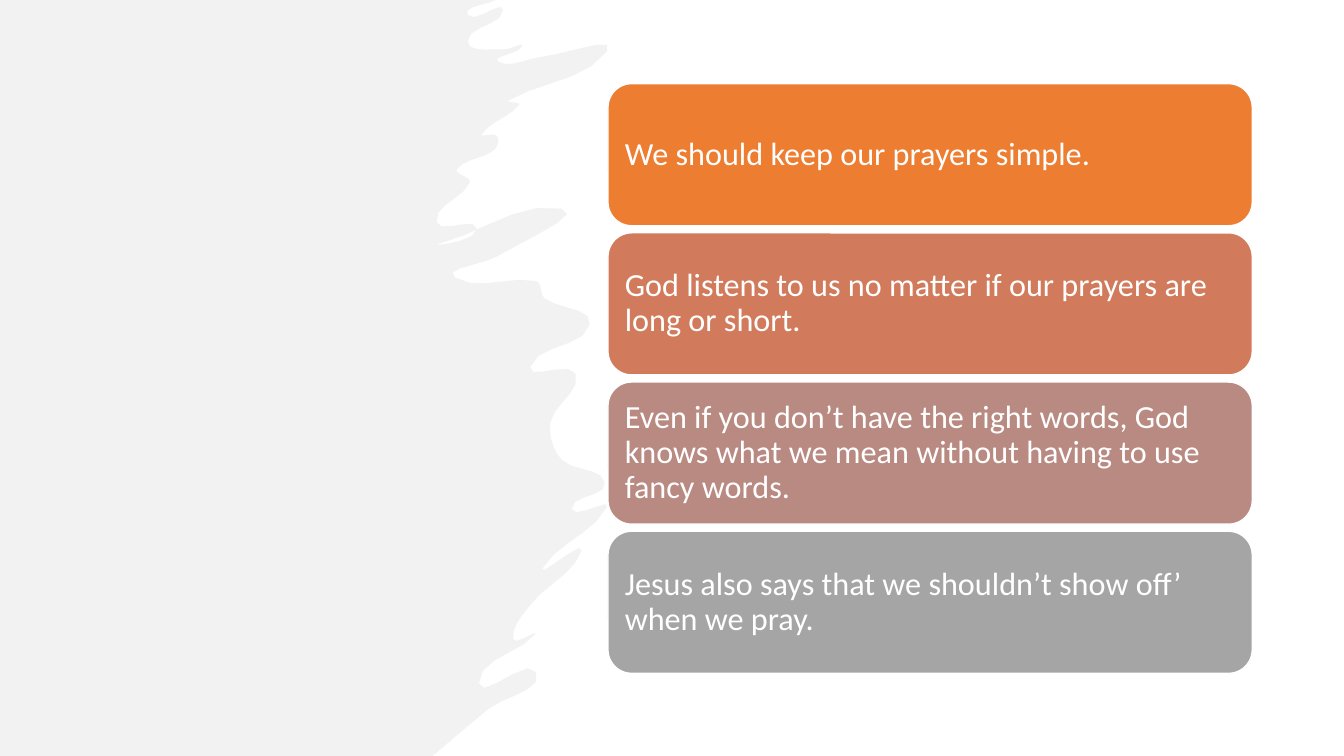
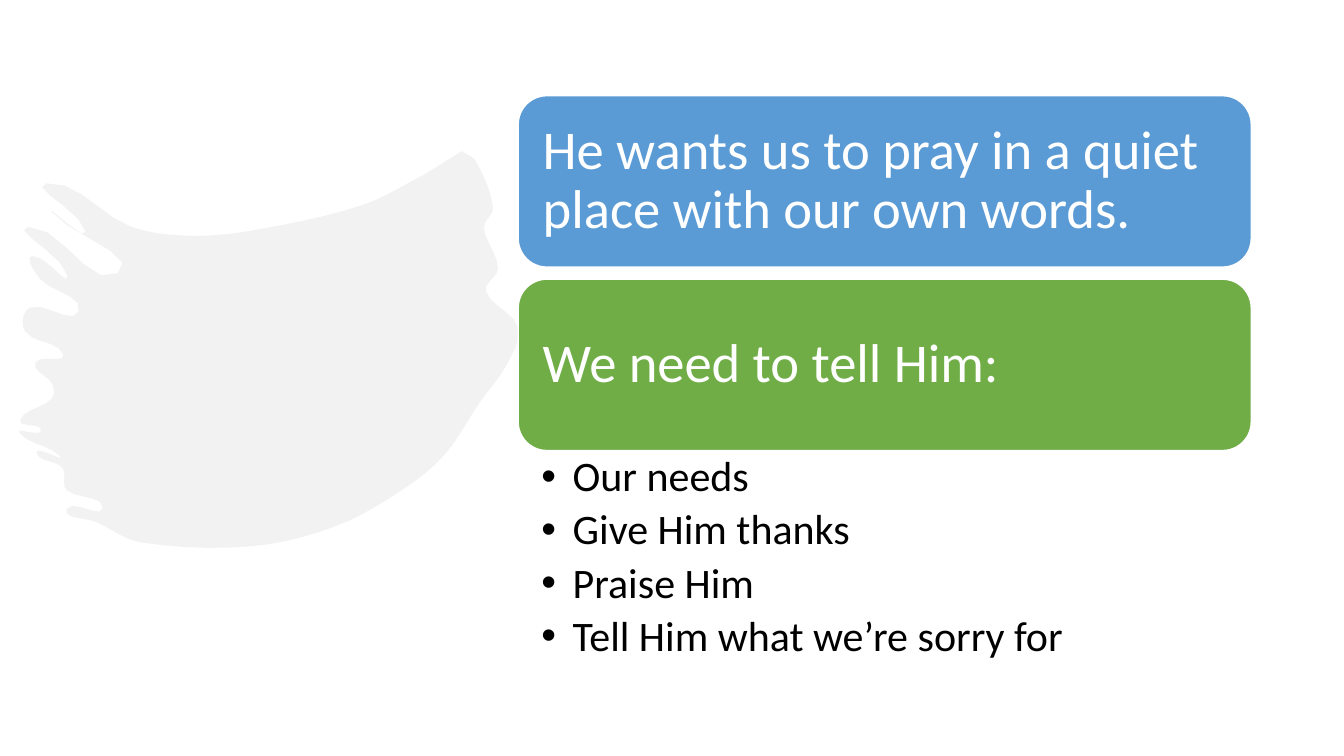
"""Build two prayer slides with brush strokes and stacked cards."""
from dataclasses import dataclass
from math import dist

from lxml.etree import SubElement
from pptx import Presentation
from pptx.dml.color import RGBColor
from pptx.enum.shapes import MSO_SHAPE
from pptx.enum.text import MSO_ANCHOR, MSO_AUTO_SIZE, PP_ALIGN
from pptx.oxml.ns import qn
from pptx.slide import Slide
from pptx.util import Emu, Pt

PX = 9144
FONT = "Calibri"
WHITE = RGBColor(0xFF, 0xFF, 0xFF)
BLACK = RGBColor(0x00, 0x00, 0x00)
BRUSH = RGBColor(0xE7, 0xE6, 0xE6)
ORANGE = RGBColor(0xED, 0x7D, 0x31)
TERRACOTTA = RGBColor(0xD1, 0x7B, 0x5C)
ROSE = RGBColor(0xB9, 0x8A, 0x82)
GREY = RGBColor(0xA5, 0xA5, 0xA5)
BLUE = RGBColor(0x5B, 0x9B, 0xD5)
GREEN = RGBColor(0x70, 0xAD, 0x47)

Point = tuple[float, float]

PANEL_CORNERS = ((0, 750), (0, 0))
PANEL_EDGE = (
    (492, 0), (464, 15), (499, 10), (464, 41), (500, 49), (518, 46), (494, 61), (535, 57),
    (602, 51), (504, 100), (515, 104), (478, 133), (493, 135), (490, 149), (453, 168),
    (466, 181), (433, 220), (473, 227), (435, 242), (557, 207), (494, 254), (451, 275),
    (532, 279), (540, 296), (585, 322), (526, 364), (571, 371), (546, 419), (557, 456),
    (600, 479), (567, 505), (602, 503), (538, 564), (577, 546), (527, 599), (509, 634),
    (531, 629), (475, 678), (532, 667), (485, 703), (429, 750),
)
STROKE_EDGE = (
    (458, 150), (472, 160), (489, 206), (480, 226), (494, 266), (482, 289), (514, 325),
    (503, 361), (476, 399), (441, 451), (399, 486), (333, 522), (249, 542), (139, 538),
    (96, 518), (66, 505), (102, 504), (66, 486), (62, 464), (36, 449), (60, 453), (19, 429),
    (41, 427), (20, 417), (51, 396), (52, 381), (35, 360), (63, 352), (25, 329), (30, 305),
    (78, 309), (40, 277), (32, 254), (67, 274), (28, 225), (117, 271), (51, 210), (85, 230),
    (46, 182), (130, 225), (192, 234), (260, 227), (361, 203), (423, 172),
)
NEEDS = ("Our needs", "Give Him thanks", "Praise Him", "Tell Him what we’re sorry for")


@dataclass(frozen=True)
class Card:
    """Wording and fill of one rounded card."""

    text: str
    fill: RGBColor


@dataclass(frozen=True)
class Stack:
    """Geometry and text size of a column of cards, in px and points."""

    left: int
    top: int
    width: int
    height: int
    pitch: int
    inset: int
    size: int


PRAYER_STACK = Stack(603, 83, 639, 141, 148, 10, 23)
PRAYER_CARDS = (
    Card("We should keep our prayers simple.", ORANGE),
    Card("God listens to us no matter if our prayers are long or short.", TERRACOTTA),
    Card("Even if you don’t have the right words, God knows what we mean "
         "without having to use fancy words.", ROSE),
    Card("Jesus also says that we shouldn’t show off’ when we pray.", GREY),
)
QUIET_STACK = Stack(514, 95, 727, 170, 182, 16, 39)
QUIET_CARDS = (
    Card("He wants us to pray in a quiet place with our own words.", BLUE),
    Card("We need to tell Him:", GREEN),
)


def px(length: float) -> Emu:
    """Turn px into EMU."""
    return Emu(round(length * PX))


def apply(target: object, formats: dict[str, object]) -> None:
    """Set every attribute named in the format values."""
    for name, value in formats.items():
        setattr(target, name, value)


def format_insets(left: int, top: int, right: int, bottom: int) -> dict[str, object]:
    """Return text frame format values for the given insets."""
    return {
        "margin_left": px(left), "margin_top": px(top),
        "margin_right": px(right), "margin_bottom": px(bottom),
        "word_wrap": True, "auto_size": MSO_AUTO_SIZE.NONE,
    }


def write(para: object, text: str, size: int, colour: RGBColor, after: float = 0) -> None:
    """Write one left-aligned span into a paragraph."""
    apply(para, {"alignment": PP_ALIGN.LEFT, "line_spacing": 0.9,
                 "space_before": Pt(0), "space_after": Pt(after)})
    span = para.add_run()
    span.text = text
    apply(span.font, {"name": FONT, "size": Pt(size)})
    span.font.color.rgb = colour


def smooth(edge: tuple[Point, ...], steps: int = 5) -> list[Point]:
    """Return points on a soft curve through the edge."""
    tangents = []
    for before, after in zip(edge[:1] + edge[:-1], edge[1:] + edge[-1:]):
        length = dist(before, after) or 1
        tangents.append(((after[0] - before[0]) / length, (after[1] - before[1]) / length))
    curve = [edge[0]]
    for index, (start, end) in enumerate(zip(edge, edge[1:])):
        reach = dist(start, end) / 3
        for step in range(1, steps + 1):
            t = step / steps
            curve.append(tuple(
                (1 - t) ** 3 * start[axis]
                + 3 * t * (1 - t) ** 2 * (start[axis] + reach * tangents[index][axis])
                + 3 * t * t * (1 - t) * (end[axis] - reach * tangents[index + 1][axis])
                + t ** 3 * end[axis]
                for axis in (0, 1)))
    return curve


def draw_brush(page: Slide, edge: tuple[Point, ...], corners: tuple[Point, ...] = ()) -> None:
    """Draw a half-transparent brush area."""
    points = [(px(x), px(y)) for x, y in smooth(edge) + list(corners)]
    builder = page.shapes.build_freeform(*points[0], scale=1.0)
    builder.add_line_segments(points[1:], close=True)
    brush = builder.convert_to_shape()
    brush.shadow.inherit = False
    brush.line.fill.background()
    brush.fill.solid()
    brush.fill.fore_color.rgb = BRUSH
    colour = brush._element.spPr.find(".//" + qn("a:srgbClr"))
    SubElement(colour, qn("a:alpha"), val="50000")


def draw_cards(page: Slide, stack: Stack, cards: tuple[Card, ...]) -> None:
    """Draw a column of cards at equal steps."""
    for index, card in enumerate(cards):
        top = stack.top + index * stack.pitch
        box = page.shapes.add_shape(
            MSO_SHAPE.ROUNDED_RECTANGLE,
            *map(px, (stack.left, top, stack.width, stack.height)))
        box.shadow.inherit = False
        box.fill.solid()
        box.fill.fore_color.rgb = card.fill
        box.line.color.rgb = WHITE
        box.line.width = Pt(1)
        apply(box.text_frame, format_insets(*[stack.inset] * 4))
        box.text_frame.vertical_anchor = MSO_ANCHOR.MIDDLE
        write(box.text_frame.paragraphs[0], card.text, stack.size, WHITE)


def fill_list(page: Slide, items: tuple[str, ...]) -> None:
    """Move the body placeholder and fill it with bullets."""
    body = page.placeholders[1]
    apply(body, {"left": px(514), "top": px(447), "width": px(727), "height": px(225)})
    frame = body.text_frame
    apply(frame, format_insets(23, 5, 30, 5))
    frame.vertical_anchor = MSO_ANCHOR.TOP
    for index, item in enumerate(items):
        para = frame.add_paragraph() if index else frame.paragraphs[0]
        write(para, item, 30, BLACK, after=5.5)
        properties = para._p.get_or_add_pPr()
        properties.set("marL", str(px(31)))
        properties.set("indent", str(-px(31)))
        SubElement(properties, qn("a:buFont"), typeface="Arial")
        SubElement(properties, qn("a:buChar"), char="•")


def remove_empty_placeholders(page: Slide) -> None:
    """Remove placeholders that hold no text."""
    for holder in list(page.placeholders):
        if not holder.text_frame.text:
            holder._element.getparent().remove(holder._element)


def main() -> None:
    """Build and save the deck."""
    deck = Presentation()
    apply(deck, {"slide_width": px(1333), "slide_height": px(750)})
    layout = deck.slide_layouts[1]

    page = deck.slides.add_slide(layout)
    draw_brush(page, PANEL_EDGE, PANEL_CORNERS)
    draw_cards(page, PRAYER_STACK, PRAYER_CARDS)
    remove_empty_placeholders(page)

    page = deck.slides.add_slide(layout)
    draw_brush(page, STROKE_EDGE)
    draw_cards(page, QUIET_STACK, QUIET_CARDS)
    fill_list(page, NEEDS)
    remove_empty_placeholders(page)

    deck.save("out.pptx")


if __name__ == "__main__":
    main()
